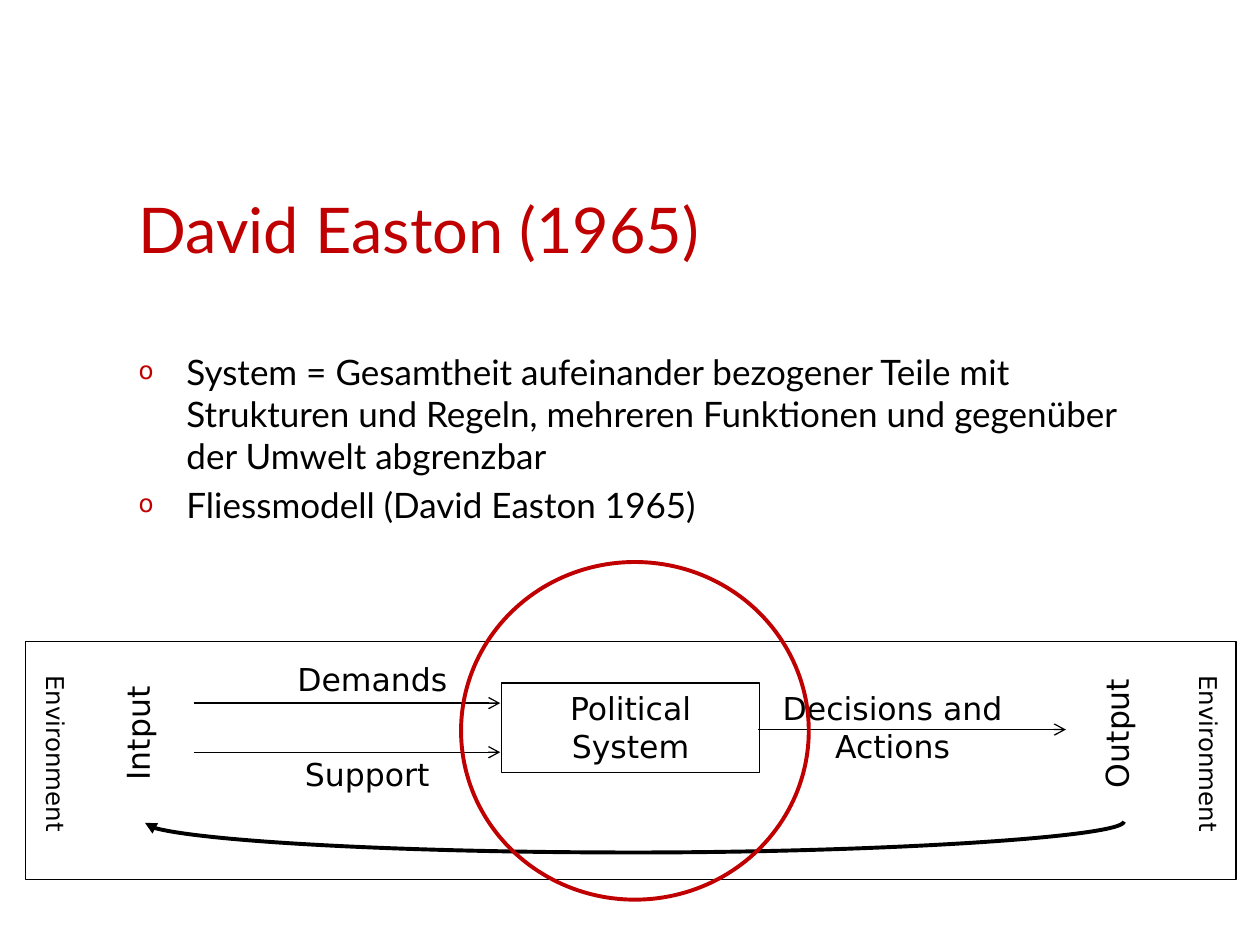
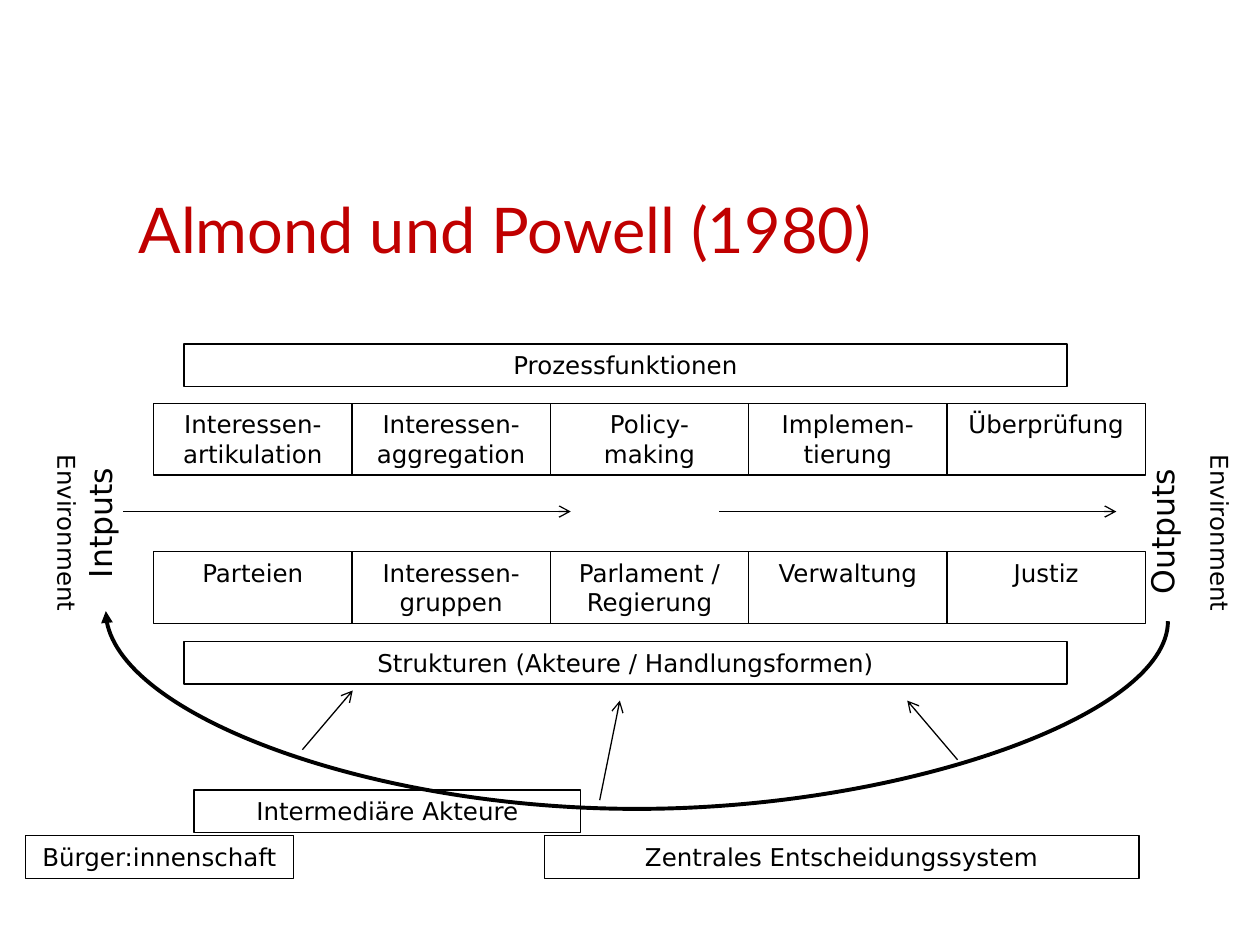
from dataclasses import dataclass

from lxml.etree import SubElement
from pptx import Presentation
from pptx.dml.color import RGBColor
from pptx.enum.shapes import MSO_CONNECTOR as LINK, MSO_SHAPE as SHAPE
from pptx.enum.text import MSO_ANCHOR as ANCHOR, MSO_AUTO_SIZE as FIT, PP_ALIGN as ALIGN
from pptx.oxml.ns import qn
from pptx.util import Inches, Pt

RED, BLACK = "C00000", "000000"
TEXT_FONT, DIAGRAM_FONT = "Lato", "DejaVu Sans"
LARGE, SMALL = 18, 14
THIN, THICK = 0.75, 2.25
UPWARD, DOWNWARD = "vert270", "vert"


@dataclass
class Box:
    """A region in EMU whose areas are given in percent of its size."""
    left: int
    top: int
    width: int
    height: int

    def point(self, x, y):
        """Return the position at x and y percent."""
        return int(self.left + self.width * x / 100), int(self.top + self.height * y / 100)

    def area(self, x, y, width, height):
        """Return the box at x and y percent with the given shares."""
        return Box(*self.point(x, y), int(self.width * width / 100), int(self.height * height / 100))

    def bounds(self):
        """Return left, top, width and height."""
        return self.left, self.top, self.width, self.height


SLIDE = Box(0, 0, Inches(10), Inches(7.5))
TITLE = SLIDE.area(10, 12.13, 80, 16.67)
BODY = SLIDE.area(10, 36.4, 80, 27.33)


def color(hex_code):
    """Turn a hex string into a colour."""
    return RGBColor.from_string(hex_code)


def add_run(paragraph, text, size, font=DIAGRAM_FONT, hex_code=BLACK):
    """Add one formatted run."""
    run = paragraph.add_run()
    run.text = text
    run.font.size, run.font.name = Pt(size), font
    run.font.color.rgb = color(hex_code)


def write_centred(frame, text, size):
    """Write centred text from the top of a frame."""
    frame.word_wrap = True
    frame.vertical_anchor = ANCHOR.TOP
    paragraph = frame.paragraphs[0]
    paragraph.alignment = ALIGN.CENTER
    for index, line in enumerate(text.split("\n")):
        if index:
            paragraph.add_line_break()
        add_run(paragraph, line, size)


def set_line(line, hex_code, width):
    """Set colour and width of a line."""
    line.color.rgb = color(hex_code)
    line.width = Pt(width)


def add_outline(slide, box, text="", size=SMALL, kind=SHAPE.RECTANGLE, hex_code=BLACK, width=THIN):
    """Add an unfilled shape, with text if given."""
    outline = slide.shapes.add_shape(kind, *box.bounds())
    outline.shadow.inherit = False
    outline.fill.background()
    set_line(outline.line, hex_code, width)
    if text:
        write_centred(outline.text_frame, text, size)


def add_label(slide, box, text, size=LARGE, direction="horz"):
    """Add a text box that runs in the given direction."""
    frame = slide.shapes.add_textbox(*box.bounds()).text_frame
    write_centred(frame, text, size)
    frame._txBody.bodyPr.set("vert", direction)


def finish_link(link, width, head):
    """Style a connector and put an arrowhead at its end."""
    set_line(link.line, BLACK, width)
    properties = link._element.spPr
    SubElement(properties.find(qn("a:ln")), qn("a:tailEnd"), type=head)
    SubElement(properties, qn("a:effectLst"))


def add_arrow(slide, start, end):
    """Add a thin straight arrow."""
    finish_link(slide.shapes.add_connector(LINK.STRAIGHT, *start, *end), THIN, "arrow")


def add_feedback(slide, start, end, lowest):
    """Add a curve from right to left that sags to the lowest height."""
    span, rise = start[0] - end[0], end[1] - start[1]
    left = (start[0] + end[0] - abs(rise)) // 2
    top = (start[1] + end[1] - span) // 2
    link = slide.shapes.add_connector(LINK.CURVE, left, top, left + abs(rise), top + span)
    properties = link._element.spPr
    transform = properties.find(qn("a:xfrm"))
    transform.set("rot", "5400000")
    if rise < 0:
        transform.set("flipH", "1")
    sag = round((lowest - start[1]) / rise * 100000)
    adjustments = properties.find(qn("a:prstGeom")).get_or_add_avLst()
    SubElement(adjustments, qn("a:gd"), name="adj1", fmla=f"val {sag}")
    finish_link(link, THICK, "triangle")


def fill_placeholder(placeholder, box, anchor):
    """Move a placeholder and return its text frame."""
    placeholder.left, placeholder.top, placeholder.width, placeholder.height = box.bounds()
    frame = placeholder.text_frame
    frame.word_wrap, frame.auto_size, frame.vertical_anchor = True, FIT.NONE, anchor
    return frame


def add_titled_slide(deck, layout, title):
    """Add a slide with the shared title style."""
    slide = deck.slides.add_slide(deck.slide_layouts.get_by_name(layout))
    heading = fill_placeholder(slide.shapes.title, TITLE, ANCHOR.BOTTOM).paragraphs[0]
    heading.alignment = ALIGN.LEFT
    add_run(heading, title, 36, TEXT_FONT, RED)
    return slide


def add_bullets(slide, box, points):
    """Fill the body placeholder with a red bulleted list."""
    frame = fill_placeholder(slide.placeholders[1], box, ANCHOR.TOP)
    for index, point in enumerate(points):
        paragraph = frame.add_paragraph() if index else frame.paragraphs[0]
        properties = paragraph._p.get_or_add_pPr()
        properties.set("marL", str(Inches(0.38)))
        properties.set("indent", str(-Inches(0.38)))
        SubElement(SubElement(properties, qn("a:buClr")), qn("a:srgbClr"), val=RED)
        SubElement(properties, qn("a:buSzPct"), val="70000")
        SubElement(properties, qn("a:buFont"), typeface=DIAGRAM_FONT)
        SubElement(properties, qn("a:buChar"), char="o")
        paragraph.space_before = Pt(4 if index else 0)
        add_run(paragraph, point, 20, TEXT_FONT)


def draw_flow_model(slide, box):
    """Draw the system between input and output in its environment."""
    add_outline(slide, box.area(39.33, 17.46, 21.33, 37.57), "Political System", LARGE)
    add_label(slide, box.area(61.39, 17.46, 20.5, 37.57), "Decisions and Actions")
    add_label(slide, box.area(18.42, 5.29, 20.5, 21.16), "Demands")
    add_label(slide, box.area(18, 44.97, 20.5, 21.16), "Support")
    for x, text in ((7.18, "Intput"), (88.03, "Output")):
        add_label(slide, box.area(x, 1.06, 5.2, 75.13), text, LARGE, UPWARD)
    for x in (-0.31, 94.9):
        add_label(slide, box.area(x, 5.29, 4.58, 83.6), "Environment", SMALL, DOWNWARD)
    add_outline(slide, box)
    for start, end, y in ((13.94, 39.23, 25.93), (13.94, 39.23, 46.56), (60.56, 85.95, 37.04)):
        add_arrow(slide, box.point(start, y), box.point(end, y))
    add_feedback(slide, box.point(90.74, 75.66), box.point(9.89, 76.19), box.point(0, 88.89)[1])
    add_outline(slide, box.area(36, -33.33, 28.72, 141.8), kind=SHAPE.OVAL, hex_code=RED, width=THICK)


def draw_environment(slide, box):
    """Draw inputs, outputs and feedback at both edges."""
    add_feedback(slide, box.point(93.95, 94.3), box.point(6.05, 89.24), box.point(0, 188.61)[1])
    for x in (0, 95.41):
        add_label(slide, box.area(x, 0, 4.59, 100), "Environment", SMALL, DOWNWARD)
    for x, y, text in ((3.44, 0, "Intputs"), (91.35, 4.43, "Outputs")):
        add_label(slide, box.area(x, y, 5.21, 89.87), text, LARGE, UPWARD)


def draw_process(slide, box):
    """Draw process functions above the structures that serve them."""
    functions = ("Interessen-artikulation", "Interessen-aggregation", "Policy-\nmaking",
                 "Implemen-tierung", "Überprüfung")
    structures = ("Parteien", "Interessen-gruppen", "Parlament / Regierung", "Verwaltung", "Justiz")
    for y, names in ((17.41, functions), (61.11, structures)):
        share = 100 / len(names)
        for column, name in enumerate(names):
            add_outline(slide, box.area(column * share, y, share, 21.11), name)
    for y, heading in ((0, "Prozessfunktionen"), (87.41, "Strukturen (Akteure / Handlungsformen)")):
        add_outline(slide, box.area(3.05, y, 89.07, 12.59), heading)
    for start, end in ((-3.05, 42.06), (57.05, 97.08)):
        add_arrow(slide, box.point(start, 49.26), box.point(end, 49.26))


def draw_actors(slide, box):
    """Draw the actors and the arrows up to the structures."""
    for x, y, width, actor in ((0, 77.18, 24.1, "Bürger:innenschaft"),
                               (15.16, 53.02, 34.73, "Intermediäre Akteure"),
                               (46.61, 77.18, 53.39, "Zentrales Entscheidungssystem")):
        add_outline(slide, box.area(x, y, width, 22.82), actor)
    for start, end in (((24.89, 31.54), (29.41, 0)), ((51.58, 58.39), (53.39, 5.37)),
                       ((83.71, 36.91), (79.19, 5.37))):
        add_arrow(slide, box.point(*start), box.point(*end))


def main():
    """Build and save both slides."""
    deck = Presentation()
    deck.slide_width, deck.slide_height = SLIDE.width, SLIDE.height

    easton = add_titled_slide(deck, "Title and Content", "David Easton (1965)")
    add_bullets(easton, BODY, (
        "System = Gesamtheit aufeinander bezogener Teile mit Strukturen und Regeln, "
        "mehreren Funktionen und gegenüber der Umwelt abgrenzbar",
        "Fliessmodell (David Easton 1965)"))
    draw_flow_model(easton, SLIDE.area(2, 67.87, 96.1, 25.2))

    almond = add_titled_slide(deck, "Title Only", "Almond und Powell (1980)")
    draw_environment(almond, SLIDE.area(2.6, 45.87, 95.9, 21.07))
    draw_process(almond, SLIDE.area(12.2, 36.4, 78.7, 36))
    draw_actors(almond, SLIDE.area(2, 73.07, 88.4, 19.87))
    deck.save("out.pptx")


if __name__ == "__main__":
    main()
